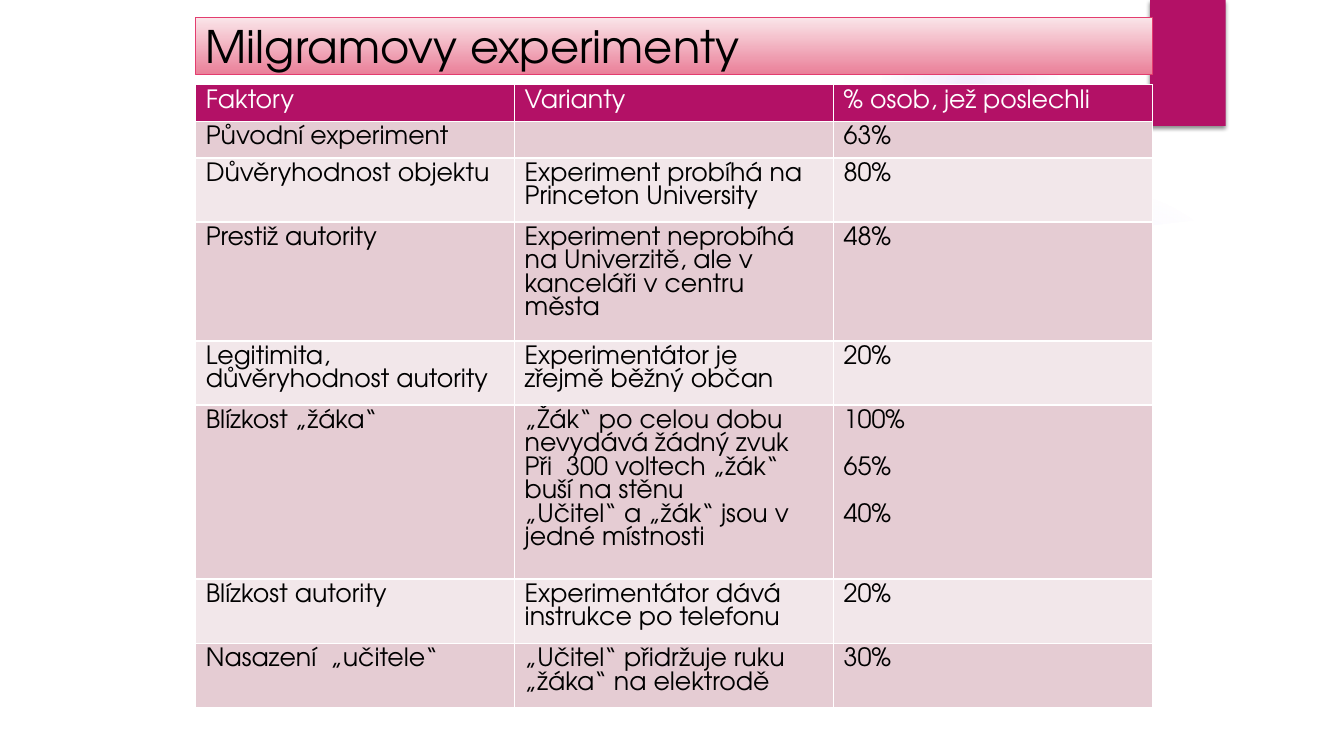
from lxml import etree
from pptx import Presentation
from pptx.dml.color import RGBColor
from pptx.enum.shapes import MSO_SHAPE
from pptx.enum.text import MSO_ANCHOR, MSO_AUTO_SIZE, PP_ALIGN
from pptx.util import Pt

RECT = MSO_SHAPE.RECTANGLE
OVAL = MSO_SHAPE.OVAL
FRAME = MSO_SHAPE.FRAME
MIDDLE = MSO_ANCHOR.MIDDLE
LEFT = PP_ALIGN.LEFT
FIXED = MSO_AUTO_SIZE.NONE
FONT = "TeX Gyre Adventor"
ROSE = "B31166"
WHITE = "FFFFFF"
BLACK = "000000"
BANDS = ("E5CCD3", "F2E7EA")
EDGE = 139.8
WIDTH = 683.4
PITCH = 16.7
HEIGHTS = (26.2, 26.2, 45.8, 85, 45.8, 124.3, 45.8, 45.8)
ROWS = (
    ("Faktory", "Varianty", "% osob, jež poslechli"),
    ("Původní experiment", "", "63%"),
    ("Důvěryhodnost objektu", "Experiment probíhá na Princeton University", "80%"),
    ("Prestiž autority",
     "Experiment neprobíhá na Univerzitě, ale v kanceláři v centru města", "48%"),
    ("Legitimita, důvěryhodnost autority",
     "Experimentátor je zřejmě běžný občan", "20%"),
    ("Blízkost „žáka“",
     "„Žák“ po celou dobu nevydává žádný zvuk\n"
     "Při  300 voltech „žák“ buší na stěnu\n"
     "„Učitel“ a „žák“ jsou v jedné místnosti",
     "100%\n65%\n40%"),
    ("Blízkost autority", "Experimentátor dává instrukce po telefonu", "20%"),
    ("Nasazení  „učitele“", "„Učitel“ přidržuje ruku „žáka“ na elektrodě", "30%"),
)
GLOWS = (
    (677.5, 131.8, 221.8, ((0, 7), (36, 6), (69, 0))),
    (630, 0.7, 126, ((0, 14), (36, 7), (73, 0))),
)
RIBBON = (
    (672.5, 180), (741, 177), (835, 166), (928, 154), (923.8, 119.5),
    (890, 130.3), (848.2, 142.2), (798.5, 154), (750.2, 163.4),
    (704.9, 170.6), (669.6, 175),
)
SHEET = (
    (36, 504), (924.5, 504), (924.5, 146.9), (864, 156.2), (803.5, 163.4),
    (743, 169), (683.3, 173.5), (624.2, 176.4), (565.9, 177.8),
    (509.8, 178.6), (455, 178.2), (402.5, 177.1), (351.4, 175),
    (288.7, 171.4), (231.1, 167.8), (179.3, 163.4), (134.6, 159.1),
    (97.2, 154.8), (67.7, 151.2), (36, 146.9),
)
SPACE = 'xmlns:a="http://schemas.openxmlformats.org/drawingml/2006/main"'
SHADOW = (
    f'<a:effectLst {SPACE}>'
    '<a:outerShdw blurRad="38100" dist="25400" dir="5400000" rotWithShape="0">'
    '<a:srgbClr val="000000"><a:alpha val="45000"/></a:srgbClr>'
    '</a:outerShdw></a:effectLst>'
)


def paint(color, code):
    """Set a colour from a hex string."""
    color.rgb = RGBColor.from_string(code)


def fill(item, code):
    """Give a shape or cell a solid fill."""
    item.fill.solid()
    paint(item.fill.fore_color, code)


def plain(shape, code):
    """Fill a shape without line or shadow."""
    fill(shape, code)
    shape.line.fill.background()
    shape.shadow.inherit = False


def send_back(slide, shape):
    """Move a shape right behind the title."""
    slide.shapes.title._element.addprevious(shape._element)


def add_run(para, text, size, code):
    """Add one run of text to a paragraph."""
    run = para.add_run()
    run.text = text
    run.font.name = FONT
    run.font.size = Pt(size)
    run.font.bold = False
    paint(run.font.color, code)


def add_glow(slide, left, top, size, stops):
    """Add a round violet glow that fades outwards."""
    glow = slide.shapes.add_shape(OVAL, Pt(left), Pt(top), Pt(size), Pt(size))
    plain(glow, WHITE)
    marks = "".join(
        f'<a:gs pos="{pos * 1000}"><a:srgbClr val="9B6BF2">'
        f'<a:alpha val="{alpha * 1000}"/></a:srgbClr></a:gs>'
        for pos, alpha in stops)
    shade = etree.fromstring(
        f'<a:gradFill {SPACE} rotWithShape="1"><a:gsLst>{marks}</a:gsLst>'
        '<a:path path="circle"><a:fillToRect l="50000" t="50000" r="50000" '
        'b="50000"/></a:path></a:gradFill>')
    props = glow._element.spPr
    props.replace(props.find("{*}solidFill"), shade)
    send_back(slide, glow)


def add_sheet(slide, points, alpha=100):
    """Add a white outline shape with the given opacity."""
    pen = slide.shapes.build_freeform(
        Pt(points[0][0]), Pt(points[0][1]), scale=1.0)
    pen.add_line_segments([(Pt(x), Pt(y)) for x, y in points[1:]])
    sheet = pen.convert_to_shape()
    plain(sheet, WHITE)
    if alpha < 100:
        color = sheet._element.spPr.find("{*}solidFill")[0]
        color.append(etree.fromstring(
            f'<a:alpha {SPACE} val="{alpha * 1000}"/>'))
    send_back(slide, sheet)


def add_rim(slide):
    """Add the white frame round the slide."""
    rim = slide.shapes.add_shape(FRAME, 0, 0, Pt(960), Pt(540))
    rim.adjustments[0] = 0.07
    plain(rim, WHITE)
    send_back(slide, rim)


def add_tab(slide):
    """Put the corner block behind the title."""
    tab = slide.shapes.add_shape(RECT, Pt(821.5), 0, Pt(54), Pt(90))
    fill(tab, ROSE)
    tab.line.fill.background()
    tab._element.spPr.append(etree.fromstring(SHADOW))
    send_back(slide, tab)


def add_title(slide, text):
    """Place the title as a gradient bar."""
    bar = slide.shapes.title
    bar.left, bar.top = Pt(EDGE), Pt(12.6)
    bar.width, bar.height = Pt(WIDTH), Pt(40.3)
    bar.fill.gradient()
    bar.fill.gradient_angle = 270
    for stop, code in zip(bar.fill.gradient_stops, ("FAE5E9", "EA8099")):
        paint(stop.color, code)
    paint(bar.line.color, "E33D6F")
    bar.line.width = Pt(0.75)
    frame = bar.text_frame
    frame.auto_size = FIXED
    frame.vertical_anchor = MIDDLE
    para = frame.paragraphs[0]
    para.alignment = LEFT
    add_run(para, text, 32, BLACK)


def fill_cell(cell, text, code, ink, gap):
    """Write the lines of one cell, set apart by a gap."""
    fill(cell, code)
    if not text:
        cell.margin_top = cell.margin_bottom = 0
        return
    frame = cell.text_frame
    for spot, line in enumerate(text.split("\n")):
        para = frame.add_paragraph() if spot else frame.paragraphs[0]
        para.line_spacing = Pt(PITCH)
        para.space_before = Pt(gap if spot else 0)
        add_run(para, line, 18, ink)


def add_grid(slide):
    """Add the table of factors, variants and shares."""
    shape = slide.shapes.add_table(
        len(ROWS), 3, Pt(EDGE), Pt(60.4), Pt(WIDTH), Pt(sum(HEIGHTS)))
    grid = shape.table
    for col in grid.columns:
        col.width = Pt(WIDTH / 3)
    for r, (texts, height) in enumerate(zip(ROWS, HEIGHTS)):
        grid.rows[r].height = Pt(height)
        code = BANDS[(r - 1) % 2] if r else ROSE
        ink = BLACK if r else WHITE
        for c, text in enumerate(texts):
            fill_cell(grid.cell(r, c), text, code, ink, PITCH if c == 2 else 0)


def main():
    """Build and save the slide."""
    deck = Presentation()
    deck.slide_width, deck.slide_height = Pt(960), Pt(540)
    slide = deck.slides.add_slide(deck.slide_layouts[5])
    for glow in GLOWS:
        add_glow(slide, *glow)
    add_sheet(slide, RIBBON, 20)
    add_sheet(slide, SHEET)
    add_rim(slide)
    add_tab(slide)
    add_title(slide, "Milgramovy experimenty")
    add_grid(slide)
    deck.save("out.pptx")


if __name__ == "__main__":
    main()
